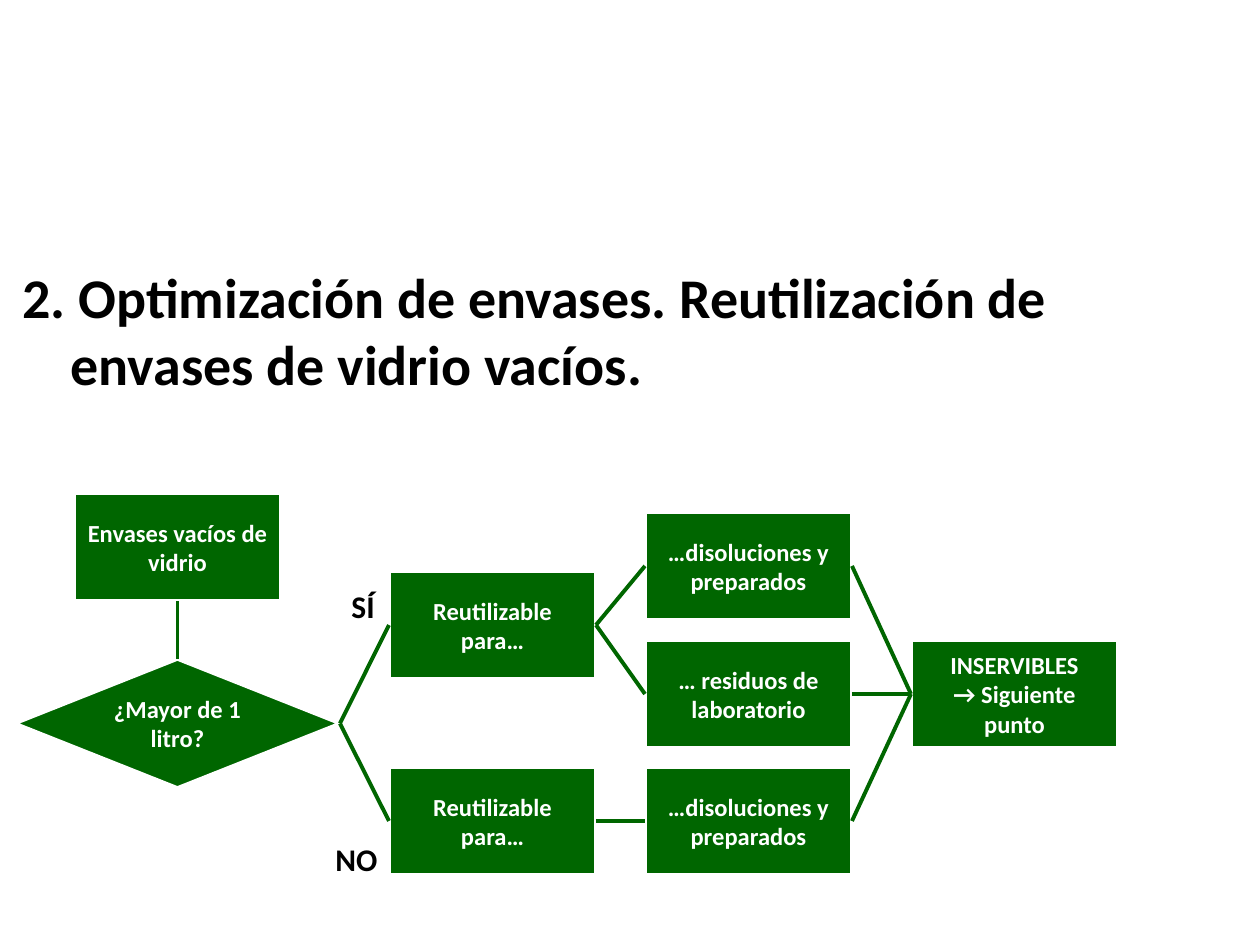
import pptx
import pptx.util
import pptx.dml.color
import pptx.enum.shapes
import pptx.enum.text
import pptx.oxml
import pptx.oxml.ns

SCALE = 914400 / 126
GREEN = pptx.dml.color.RGBColor(0x00, 0x66, 0x00)
WHITE = pptx.dml.color.RGBColor(0xFF, 0xFF, 0xFF)
BLACK = pptx.dml.color.RGBColor(0x00, 0x00, 0x00)
FONT = "Calibri"
PROCESS = pptx.enum.shapes.MSO_SHAPE.FLOWCHART_PROCESS
DECISION = pptx.enum.shapes.MSO_SHAPE.FLOWCHART_DECISION
CENTER = pptx.enum.text.PP_ALIGN.CENTER
MIDDLE = pptx.enum.text.MSO_ANCHOR.MIDDLE
TOP, LEFT, BOTTOM, RIGHT = range(4)

BOX = (207, 108)
DIAMOND = (325, 129)
COLUMNS = {"first": 74, "question": 15, "use": 389, "content": 645, "end": 911}

TITLE = "2. Optimización de envases. Reutilización de envases de vidrio vacíos."
LABELS = [("SÍ", 339, 581), ("NO", 323, 834)]
STEPS = {
    "empty": ("Envases vacíos de vidrio", "first", 493),
    "size": ("¿Mayor de 1 litro?", "question", 659),
    "large": ("Reutilizable para…", "use", 571),
    "small": ("Reutilizable para…", "use", 767),
    "large_solutions": ("…disoluciones y preparados", "content", 512),
    "large_waste": ("… residuos de laboratorio", "content", 640),
    "small_solutions": ("…disoluciones y preparados", "content", 767),
    "unusable": ("INSERVIBLES\n→ Siguiente punto", "end", 640),
}
LINKS = [
    ("empty", BOTTOM, "size", TOP),
    ("size", RIGHT, "large", LEFT),
    ("size", RIGHT, "small", LEFT),
    ("large", RIGHT, "large_solutions", LEFT),
    ("large", RIGHT, "large_waste", LEFT),
    ("small", RIGHT, "small_solutions", LEFT),
    ("large_solutions", RIGHT, "unusable", LEFT),
    ("large_waste", RIGHT, "unusable", LEFT),
    ("small_solutions", RIGHT, "unusable", LEFT),
]


def px(n):
    return pptx.util.Emu(round(n * SCALE))


def write(sp, text, size, color=BLACK, align=None, anchor=None, hanging=0):
    tf = sp.text_frame
    tf.word_wrap = True
    tf.vertical_anchor = anchor
    for i, line in enumerate(text.split("\n")):
        p = tf.add_paragraph() if i else tf.paragraphs[0]
        p.alignment = align
        if hanging:
            pPr = p._p.get_or_add_pPr()
            pPr.set("marL", str(px(hanging)))
            pPr.set("indent", str(-px(hanging)))
        r = p.add_run()
        r.text = line
        r.font.name = FONT
        r.font.size = pptx.util.Pt(size)
        r.font.bold = True
        r.font.color.rgb = color


def add_text(s, text, box, **style):
    sp = s.shapes.add_textbox(*map(px, box))
    write(sp, text, **style)


def add_step(s, text, column, top):
    kind, size = (DECISION, DIAMOND) if column == "question" else (PROCESS, BOX)
    sp = s.shapes.add_shape(kind, *map(px, (COLUMNS[column], top, *size)))
    sp.shadow.inherit = False
    sp.fill.solid()
    sp.fill.fore_color.rgb = GREEN
    sp.line.color.rgb = WHITE
    sp.line.width = pptx.util.Pt(2)
    write(sp, text, size=14, color=WHITE, align=CENTER, anchor=MIDDLE)
    return sp


def add_link(s, start, start_site, end, end_site):
    line = s.shapes.add_connector(pptx.enum.shapes.MSO_CONNECTOR.STRAIGHT, 0, 0, 0, 0)
    line.begin_connect(start, start_site)
    line.end_connect(end, end_site)
    line.line.color.rgb = GREEN
    line.line.width = pptx.util.Pt(2.25)
    effects = pptx.oxml.parse_xml("<a:effectLst %s/>" % pptx.oxml.ns.nsdecls("a"))
    line._element.spPr.append(effects)


def main():
    prs = pptx.Presentation()
    prs.slide_width, prs.slide_height = px(1260), px(945)
    s = prs.slides.add_slide(prs.slide_layouts[6])
    add_text(s, TITLE, (10, 256, 1134, 158), size=32, hanging=48)
    for text, left, top in LABELS:
        add_text(s, text, (left, top, 79, 50), size=18)
    steps = {name: add_step(s, *step) for name, step in STEPS.items()}
    for start, start_site, end, end_site in LINKS:
        add_link(s, steps[start], start_site, steps[end], end_site)
    prs.save("out.pptx")


if __name__ == "__main__":
    main()
